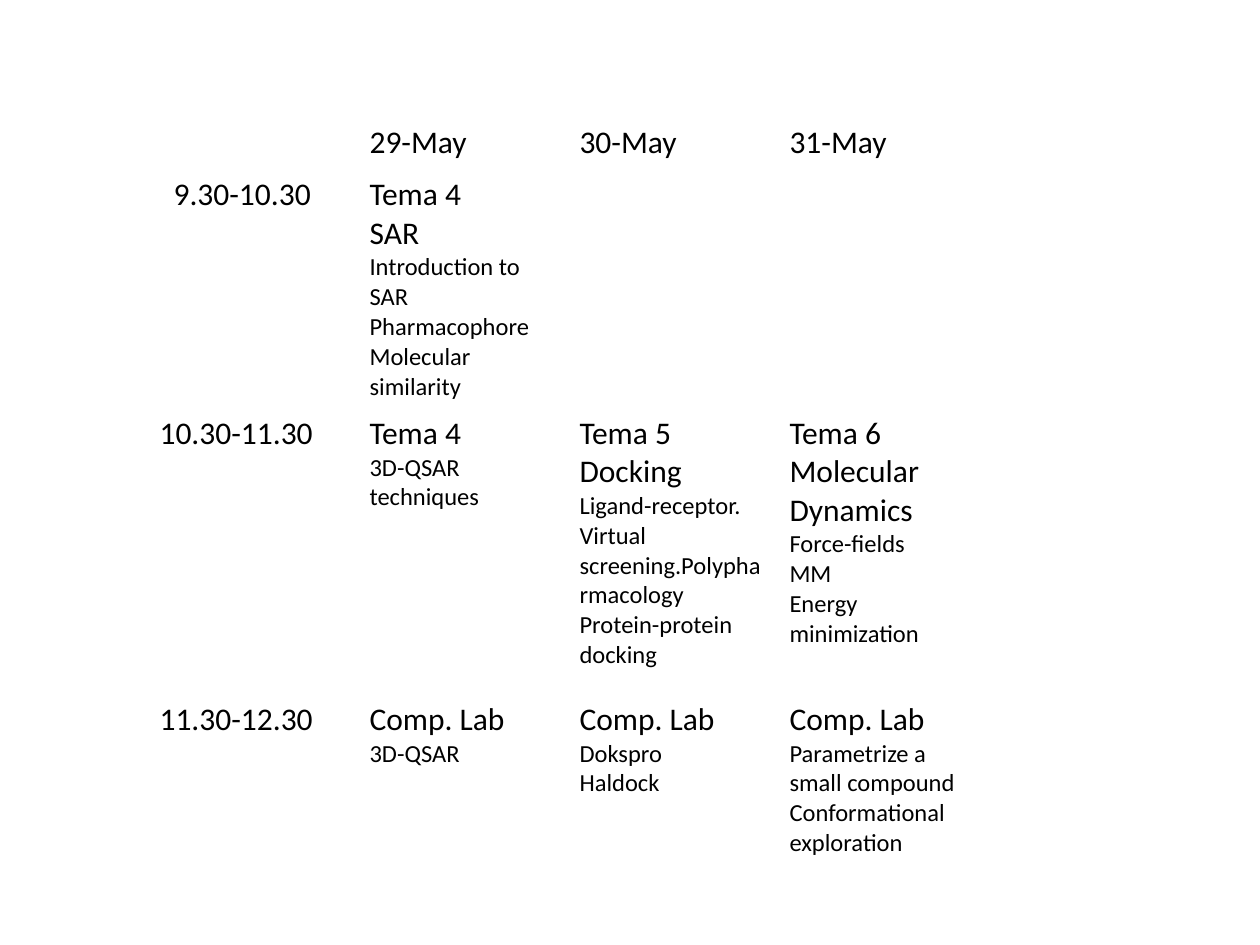
"""Build a three-day course timetable slide."""
from dataclasses import dataclass

from pptx import Presentation
from pptx.dml.color import RGBColor
from pptx.table import Table, _Cell as Cell
from pptx.util import Pt

COLORS = {"text": "000000"}
FONT = "Calibri"
HEADING_SIZE, DETAIL_SIZE = 18, 14
LEFT, TOP, COLUMN_WIDTH = 84, 67.2, 120
CELL_MARGIN = 7.2
BLANK_LAYOUT = 6


@dataclass(frozen=True)
class Session:
    headings: tuple[str, ...] = ()
    details: tuple[str, ...] = ()
    indent: float = 0


@dataclass(frozen=True)
class TimetableRow:
    height: float
    sessions: tuple[Session, ...]


EMPTY = Session()
TIMETABLE = (
    TimetableRow(29.6, (EMPTY, Session(("29-May",)), Session(("30-May",)), Session(("31-May",)))),
    TimetableRow(136, (
        Session(("9.30-10.30",), indent=8),
        Session(("Tema 4", "SAR"), ("Introduction to SAR", "Pharmacophore", "Molecular similarity")),
        EMPTY,
        EMPTY,
    )),
    TimetableRow(163.4, (
        Session(("10.30-11.30",)),
        Session(("Tema 4",), ("3D-QSAR techniques",)),
        Session(("Tema 5", "Docking"),
                ("Ligand-receptor.", "Virtual screening.Polypharmacology", "Protein-protein docking")),
        Session(("Tema 6", "Molecular Dynamics"), ("Force-fields", "MM", "Energy minimization")),
    )),
    TimetableRow(91.5, (
        Session(("11.30-12.30",)),
        Session(("Comp. Lab",), ("3D-QSAR",)),
        Session(("Comp. Lab",), ("Dokspro", "Haldock")),
        Session(("Comp. Lab",), ("Parametrize a small compound", "Conformational exploration")),
    )),
)


def write_line(cell: Cell, text: str, *, size: float, first: bool, color: str = "text") -> None:
    """Write one paragraph into a cell."""
    frame = cell.text_frame
    paragraph = frame.paragraphs[0] if first else frame.add_paragraph()
    run = paragraph.add_run()
    run.text = text
    run.font.name = FONT
    run.font.size = Pt(size)
    run.font.bold = False
    run.font.color.rgb = RGBColor.from_string(COLORS[color])


def fill_cell(cell: Cell, session: Session) -> None:
    """Write a session's headings and details into an unfilled cell."""
    cell.fill.background()
    cell.margin_left = Pt(CELL_MARGIN + session.indent)
    lines = [(text, HEADING_SIZE) for text in session.headings]
    lines += [(text, DETAIL_SIZE) for text in session.details]
    for index, (text, size) in enumerate(lines):
        write_line(cell, text, size=size, first=index == 0)


def fill_table(table: Table, rows: tuple[TimetableRow, ...]) -> None:
    """Size the table's grid and fill every cell."""
    table.first_row = False
    table.horz_banding = False
    for column in table.columns:
        column.width = Pt(COLUMN_WIDTH)
    for table_row, row in zip(table.rows, rows):
        table_row.height = Pt(row.height)
        for cell, session in zip(table_row.cells, row.sessions):
            fill_cell(cell, session)


def main() -> None:
    """Create and save the presentation."""
    presentation = Presentation()
    presentation.slide_width, presentation.slide_height = Pt(720), Pt(540)
    slide = presentation.slides.add_slide(presentation.slide_layouts[BLANK_LAYOUT])
    column_count = len(TIMETABLE[0].sessions)
    shape = slide.shapes.add_table(
        len(TIMETABLE), column_count, Pt(LEFT), Pt(TOP),
        Pt(COLUMN_WIDTH * column_count), Pt(sum(row.height for row in TIMETABLE)),
    )
    fill_table(shape.table, TIMETABLE)
    presentation.save("out.pptx")


if __name__ == "__main__":
    main()
